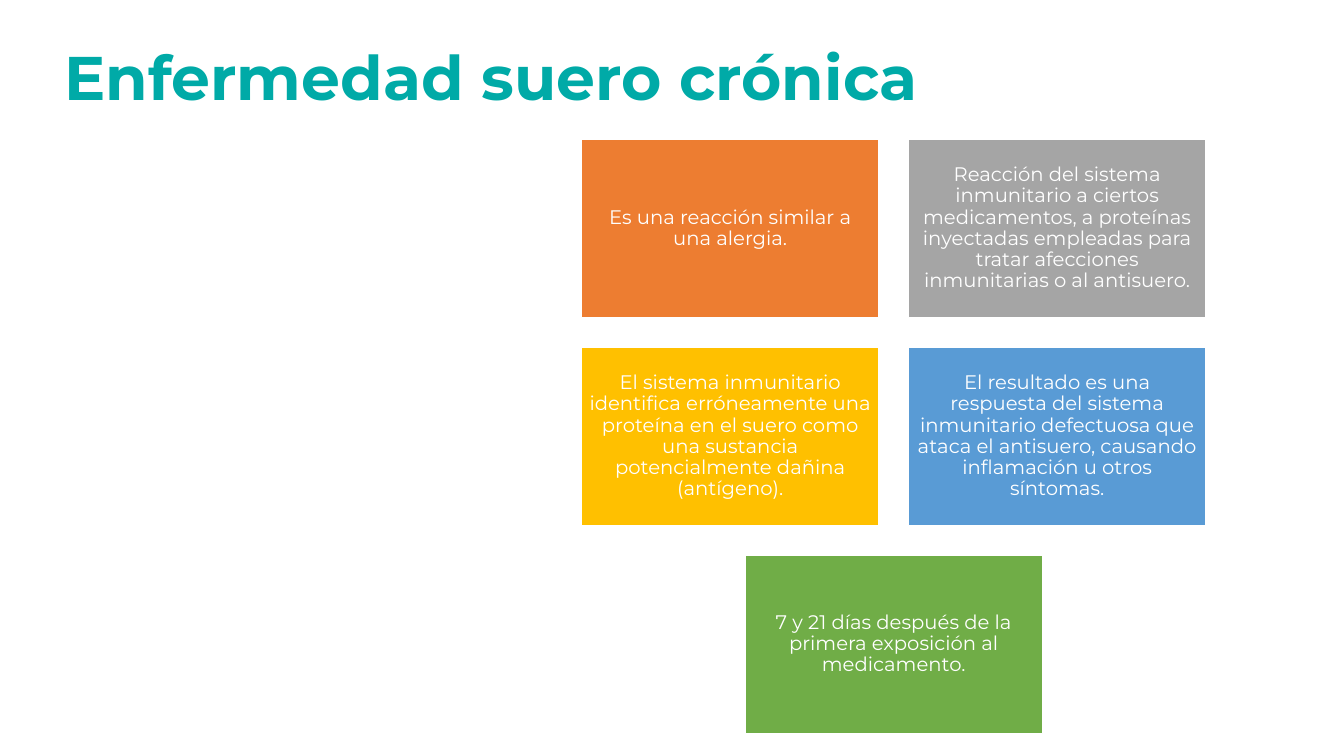
import pptx
import pptx.dml.color
import pptx.enum.shapes
import pptx.enum.text
import pptx.util

Cm = pptx.util.Cm
Pt = pptx.util.Pt
RGBColor = pptx.dml.color.RGBColor

TEAL = RGBColor(0x00, 0xAA, 0xA7)
WHITE = RGBColor(0xFF, 0xFF, 0xFF)
ORANGE = RGBColor(0xED, 0x7D, 0x31)
GRAY = RGBColor(0xA5, 0xA5, 0xA5)
YELLOW = RGBColor(0xFF, 0xC0, 0x00)
BLUE = RGBColor(0x59, 0x9B, 0xD5)
GREEN = RGBColor(0x70, 0xAD, 0x47)

GRID_LEFT, GRID_TOP = 14.66, 3.51
CARD_WIDTH, CARD_HEIGHT = 7.49, 4.49
GAP = 0.75
COLUMNS = 2

CARD_ROWS = [
    [
        ("Es una reacción similar a una alergia.", ORANGE),
        ("Reacción del sistema inmunitario a ciertos medicamentos, a proteínas "
         "inyectadas empleadas para tratar afecciones inmunitarias o al antisuero.", GRAY),
    ],
    [
        ("El sistema inmunitario identifica erróneamente una proteína en el suero "
         "como una sustancia potencialmente dañina (antígeno).", YELLOW),
        ("El resultado es una respuesta del sistema inmunitario defectuosa que ataca "
         "el antisuero, causando inflamación u otros síntomas.", BLUE),
    ],
    [
        ("7 y 21 días después de la primera exposición al medicamento.", GREEN),
    ],
]


class SlideBuilder:
    font_name = "Montserrat"
    line_spacing = 0.9

    def __init__(self, slide):
        self.slide = slide

    def set_text(self, shape, text, size, color, alignment, bold=False):
        text_frame = shape.text_frame
        text_frame.text = text
        text_frame.word_wrap = True
        text_frame.auto_size = pptx.enum.text.MSO_AUTO_SIZE.NONE
        text_frame.vertical_anchor = pptx.enum.text.MSO_ANCHOR.MIDDLE
        paragraph = text_frame.paragraphs[0]
        paragraph.alignment = alignment
        paragraph.line_spacing = self.line_spacing
        font = paragraph.runs[0].font
        font.name = self.font_name
        font.size = Pt(size)
        font.bold = bold
        font.color.rgb = color

    def title(self, text):
        shape = self.slide.shapes.title
        shape.left, shape.top = Cm(1.37), Cm(0.18)
        shape.width, shape.height = Cm(29.21), Cm(3.68)
        self.set_text(shape, text, 44, TEAL, pptx.enum.text.PP_ALIGN.LEFT, bold=True)

    def card(self, left, top, text, color):
        shape = self.slide.shapes.add_shape(
            pptx.enum.shapes.MSO_SHAPE.RECTANGLE,
            Cm(left), Cm(top), Cm(CARD_WIDTH), Cm(CARD_HEIGHT))
        shape.shadow.inherit = False
        shape.fill.solid()
        shape.fill.fore_color.rgb = color
        shape.line.color.rgb = WHITE
        shape.line.width = Pt(1)
        text_frame = shape.text_frame
        text_frame.margin_left = text_frame.margin_right = Cm(0.15)
        text_frame.margin_top = text_frame.margin_bottom = Cm(0.15)
        self.set_text(shape, text, 14, WHITE, pptx.enum.text.PP_ALIGN.CENTER)

    def card_grid(self, rows):
        """Lay out the rows of cards, centring any row that is not full."""
        pitch_x, pitch_y = CARD_WIDTH + GAP, CARD_HEIGHT + GAP
        for row_index, row in enumerate(rows):
            row_left = GRID_LEFT + (COLUMNS - len(row)) * pitch_x / 2
            for column_index, (text, color) in enumerate(row):
                self.card(row_left + column_index * pitch_x,
                          GRID_TOP + row_index * pitch_y, text, color)


def main():
    presentation = pptx.Presentation()
    presentation.slide_width = Cm(33.87)
    presentation.slide_height = Cm(19.05)
    title_only_layout = presentation.slide_layouts[5]
    builder = SlideBuilder(presentation.slides.add_slide(title_only_layout))
    builder.title("Enfermedad suero crónica")
    builder.card_grid(CARD_ROWS)
    presentation.save("out.pptx")


if __name__ == "__main__":
    main()
